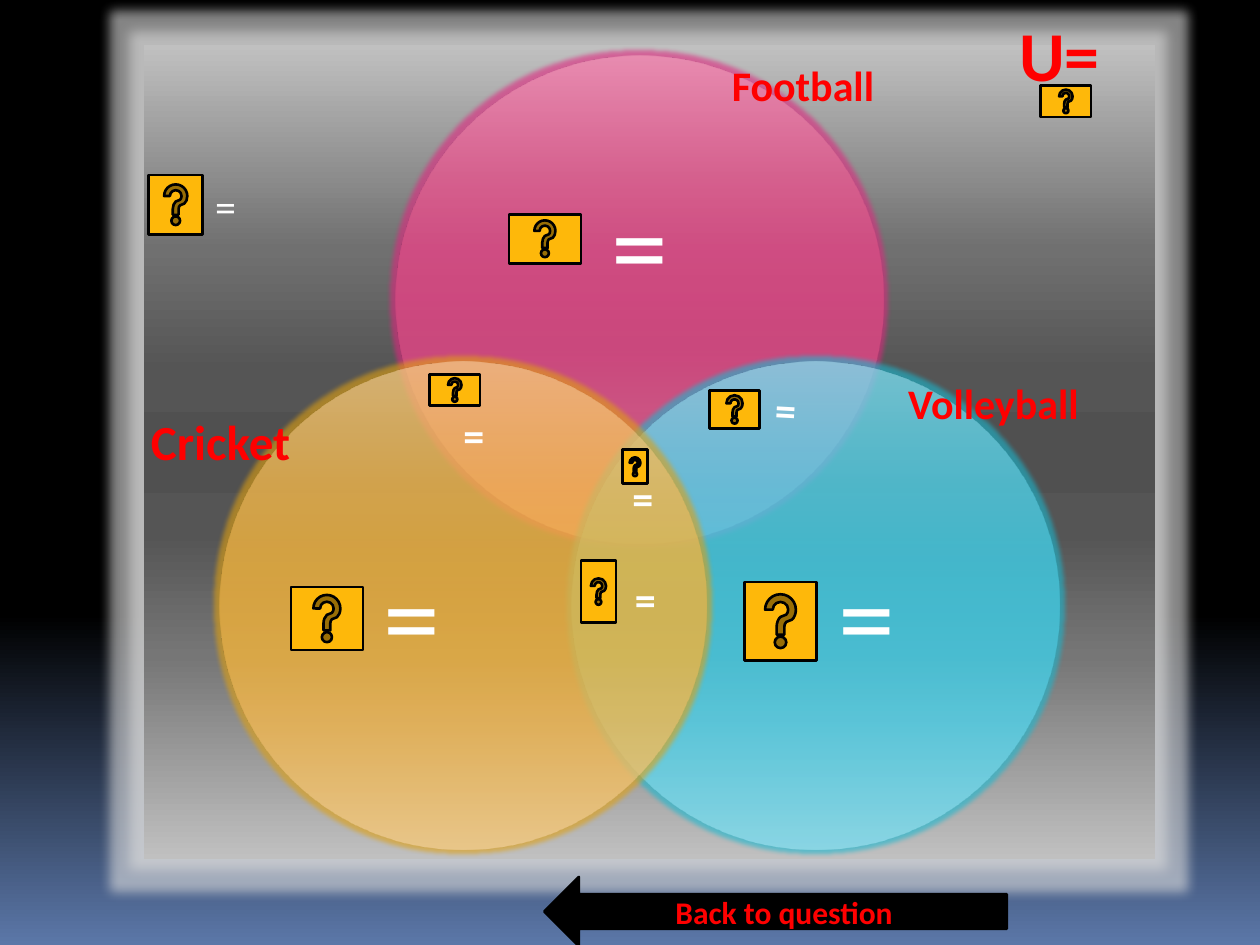
from lxml.etree import SubElement
from pptx import Presentation
from pptx.dml.color import RGBColor
from pptx.enum.shapes import MSO_SHAPE
from pptx.enum.text import MSO_ANCHOR, PP_ALIGN
from pptx.oxml.ns import qn
from pptx.util import Inches, Pt

COLORS = {
    "white": "FFFFFF", "red": "FF0000", "black": "000000", "amber": "FEB80A",
    "frame_glow": "DDDDDD", "pink_glow": "E0267F", "cyan_glow": "18B8D0",
    "gold_glow": "E0A010",
}
POSITIONS = (0, 25, 40, 50, 60, 75, 100)
GRADIENTS = {
    "frame": ("C0C0C0", "707070", "555555", "505050", "555555", "767676", "C0C0C0"),
    "pink": ("FFB6C9", "ED7198", "EC568B", "EC5289", "EC568B", "F2729A", "FFB6C9"),
    "cyan": ("BBF1FF", "70DFF6", "56DCF5", "51DCF5", "56DCF5", "71E3FB", "BBF1FF"),
    "gold": ("FFE1BF", "FEC570", "FEBF55", "FEBE51", "FEBF55", "FFC775", "FFE1BF"),
}
BACKDROP = ((0, "000000"), (65, "000000"), (100, "5B77A8"))


class VennSlide:
    """Holds the style and the slide being drawn."""

    def __init__(self, slide, font="Calibri"):
        self.slide = slide
        self.font = font

    def gradient(self, fill, owner, stops, opacity=100):
        """Fill from top to bottom with the given stops."""
        fill.gradient()
        grad = next(owner.iter(qn("a:gradFill")))
        stop_list = grad.find(qn("a:gsLst"))
        for old in list(stop_list):
            stop_list.remove(old)
        for position, color in stops:
            stop = SubElement(stop_list, qn("a:gs"), pos=str(position * 1000))
            tint = SubElement(stop, qn("a:srgbClr"), val=color)
            if opacity < 100:
                SubElement(tint, qn("a:alpha"), val=str(opacity * 1000))
        grad.find(qn("a:lin")).set("ang", "5400000")

    def backdrop(self, stops):
        """Paint the slide background."""
        self.gradient(self.slide.background.fill, self.slide.element, stops)

    def add_text(self, shape, text, size, color, bold=True, align=PP_ALIGN.LEFT):
        """Put one styled run in a shape."""
        para = shape.text_frame.paragraphs[0]
        para.alignment = align
        span = para.add_run()
        span.text = text
        span.font.name = self.font
        span.font.size = Pt(size)
        span.font.bold = bold
        span.font.color.rgb = RGBColor.from_string(COLORS[color])

    def glowing(self, kind, at, name, radius, opacity=100):
        """Add a borderless gradient shape with a soft glow."""
        shape = self.slide.shapes.add_shape(kind, *map(Inches, at))
        shape.shadow.inherit = False
        shape.line.fill.background()
        properties = shape.element.spPr
        self.gradient(shape.fill, properties, zip(POSITIONS, GRADIENTS[name]), opacity)
        effects = properties.find(qn("a:effectLst"))
        glow = SubElement(effects, qn("a:glow"), rad=str(int(Pt(radius))))
        tint = SubElement(glow, qn("a:srgbClr"), val=COLORS[name + "_glow"])
        SubElement(tint, qn("a:alpha"), val="60000")

    def label(self, at, text, size, color="red", bold=True, align=PP_ALIGN.LEFT):
        """Add a wrapped text box."""
        box = self.slide.shapes.add_textbox(*map(Inches, at))
        box.text_frame.word_wrap = True
        self.add_text(box, text, size, color, bold, align)
        return box

    def circle(self, left, top, name, text_at):
        """Add one set of the diagram with its large equals sign."""
        self.glowing(MSO_SHAPE.OVAL, (left, top, 3.87, 3.87), name, 5, 50)
        box = self.label(text_at, "=", 65, "white", False, PP_ALIGN.CENTER)
        frame = box.text_frame
        frame.vertical_anchor = MSO_ANCHOR.MIDDLE
        frame.margin_left = frame.margin_right = 0
        frame.margin_top = frame.margin_bottom = 0
        frame.paragraphs[0].line_spacing = 0.9

    def button(self, kind, at, fill):
        """Add a flat shape with a black border."""
        shape = self.slide.shapes.add_shape(kind, *map(Inches, at))
        shape.shadow.inherit = False
        shape.fill.solid()
        shape.fill.fore_color.rgb = RGBColor.from_string(COLORS[fill])
        shape.line.color.rgb = RGBColor.from_string(COLORS["black"])
        shape.line.width = Pt(1.5)
        return shape


def main():
    """Build the deck and save it."""
    deck = Presentation()
    deck.slide_width, deck.slide_height = Inches(10), Inches(7.5)
    page = VennSlide(deck.slides.add_slide(deck.slide_layouts[6]))
    page.backdrop(BACKDROP)
    page.glowing(MSO_SHAPE.RECTANGLE, (1.14, 0.36, 8.03, 6.46), "frame", 13)

    page.circle(3.14, 0.44, "pink", (3.66, 1.12, 2.84, 1.74))
    page.circle(4.54, 2.87, "cyan", (5.72, 3.87, 2.32, 2.13))
    page.circle(1.74, 2.87, "gold", (2.11, 3.87, 2.32, 2.13))

    overlap = page.label((5.54, 3, 1.39, 0.5), "=", 24, "white", align=PP_ALIGN.CENTER)
    overlap.rotation = 3.1
    for at in ((3.58, 3.2, 1.02, 0.81), (4.92, 3.7, 0.55, 0.5), (4.94, 4.5, 0.51, 0.5)):
        page.label(at, "=", 24, "white")
    page.label((1.61, 1.38, 0.99, 0.5), "=", 24, "white", False)

    for at, text, size in (
        ((7.99, 0.04, 1.34, 0.77), "U=", 40),
        ((1.1, 3.22, 1.5, 0.57), "Cricket", 28),
        ((7.11, 2.95, 2.07, 0.5), "Volleyball", 24),
        ((5.71, 0.42, 1.81, 0.5), "Football", 24),
    ):
        page.label(at, text, size)

    for at in (
        (4.04, 1.7, 0.57, 0.39), (3.41, 2.97, 0.4, 0.25), (4.94, 3.57, 0.2, 0.27),
        (4.61, 4.45, 0.28, 0.49), (5.91, 4.62, 0.57, 0.62), (2.31, 4.66, 0.57, 0.5),
        (1.18, 1.39, 0.43, 0.47), (8.26, 0.68, 0.4, 0.25), (5.63, 3.1, 0.4, 0.3),
    ):
        page.button(MSO_SHAPE.ACTION_BUTTON_HELP, at, "amber")

    back = page.button(MSO_SHAPE.LEFT_ARROW, (4.32, 6.96, 3.67, 0.55), "black")
    back.text_frame.vertical_anchor = MSO_ANCHOR.MIDDLE
    page.add_text(back, "Back to question", 18, "red", align=PP_ALIGN.CENTER)
    deck.save("out.pptx")


if __name__ == "__main__":
    main()
